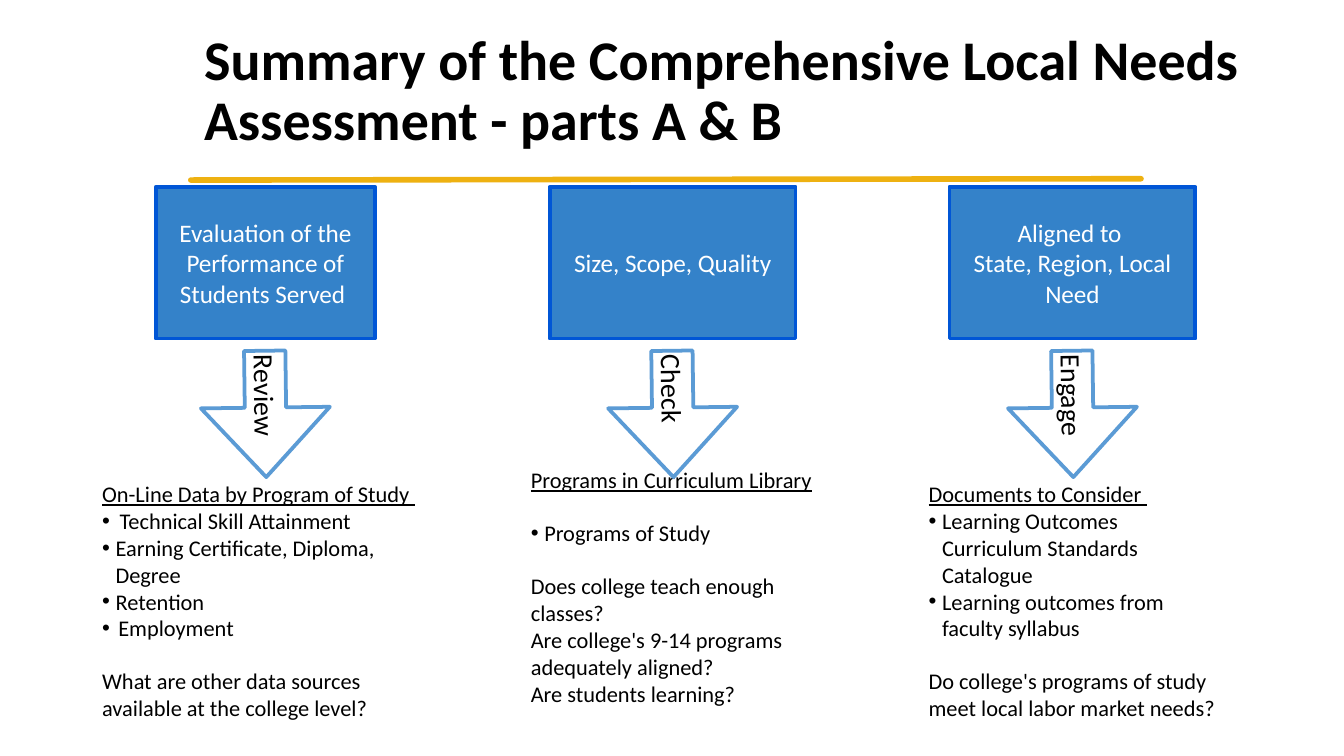
from lxml.etree import SubElement
from pptx import Presentation
from pptx.dml.color import RGBColor
from pptx.enum.shapes import MSO_CONNECTOR as Link, MSO_SHAPE as Shape
from pptx.enum.text import MSO_ANCHOR as Anchor, PP_ALIGN as Align
from pptx.oxml.ns import qn
from pptx.util import Pt

PX = 9144
COLORS = {"ink": "000000", "white": "FFFFFF", "gold": "EEB111",
          "card": "3482C9", "card_edge": "0056D6", "arrow_edge": "5B9BD5"}
INSET = 3
NOTE_GAP = 14

COLUMNS = [
    {"box": (73, 139, 249, 402), "card_width": 163, "verb": "Review",
     "card": ["Evaluation of the Performance of Students Served "],
     "heading": "On-Line Data by Program of Study ", "heading_gap": 0,
     "bullets": [("Technical Skill Attainment", 13),
                 ("Earning Certificate, Diploma, Degree", 10),
                 ("Retention", 10), ("Employment", 12)],
     "questions": ["What are other data sources available at the college level?"]},
    {"box": (392, 139, 217, 381), "card_width": 183, "verb": "Check",
     "card": ["Size, Scope, Quality"],
     "heading": "Programs in Curriculum Library", "heading_gap": NOTE_GAP,
     "bullets": [("Programs of Study", 10)],
     "questions": ["Does college teach enough classes?",
                   "Are college's 9-14 programs adequately aligned?",
                   "Are students learning?"]},
    {"box": (688, 139, 220, 402), "card_width": 183, "verb": "Engage",
     "card": ["Aligned to ", "State, Region, Local", "Need"],
     "heading": "Documents to Consider ", "heading_gap": 0,
     "bullets": [("Learning Outcomes Curriculum Standards Catalogue", 10),
                 ("Learning outcomes from faculty syllabus", 10)],
     "questions": ["Do college's programs of study meet local labor market needs?"]},
]


def emu(*lengths):
    """Turn px lengths into whole EMU."""
    return [round(length * PX) for length in lengths]


def color(name):
    """Look up a named colour."""
    return RGBColor.from_string(COLORS[name])


def set_frame(frame, inset_x=INSET, inset_y=INSET):
    """Wrap and vertically centre a text frame with the given insets."""
    frame.word_wrap = True
    frame.vertical_anchor = Anchor.MIDDLE
    frame.margin_left = frame.margin_right = inset_x * PX
    frame.margin_top = frame.margin_bottom = inset_y * PX


def add_para(frame, text, size, ink="ink", align=Align.LEFT, bold=False, underline=False):
    """Write one paragraph, reusing the empty first one."""
    first = frame.paragraphs[0]
    para = frame.add_paragraph() if first.runs else first
    para.alignment = align
    span = para.add_run()
    span.text = text
    span.font.name = "Calibri"
    span.font.size = Pt(size)
    span.font.bold = bold
    span.font.underline = underline
    span.font.color.rgb = color(ink)
    return para


def add_bullet(para, indent):
    """Give a paragraph a hanging round bullet."""
    props = para._p.get_or_add_pPr()
    props.set("marL", str(indent * PX))
    props.set("indent", str(-indent * PX))
    SubElement(props, qn("a:buFont")).set("typeface", "Arial")
    SubElement(props, qn("a:buChar")).set("char", "•")


def add_block(page, kind, box, fill, edge):
    """Draw a filled, outlined preset shape."""
    block = page.shapes.add_shape(kind, *emu(*box))
    block.shadow.inherit = False
    block.fill.solid()
    block.fill.fore_color.rgb = color(fill)
    block.line.color.rgb = color(edge)
    block.line.width = Pt(2)
    set_frame(block.text_frame)
    return block


def add_header(page, box):
    """Place the title and the gold rule below it."""
    left, top, width, height = box
    rule = page.shapes.add_connector(
        Link.STRAIGHT, *emu(left, top + 120, left + 707, top + 119))
    rule.line.color.rgb = color("gold")
    rule.line.width = Pt(3)
    rule.line._get_or_add_ln().set("cap", "rnd")
    SubElement(rule._element.spPr, qn("a:effectLst"))
    title = page.shapes.add_textbox(*emu(left, top, width, height)).text_frame
    set_frame(title, 10, 5)
    para = add_para(title, "Summary of the Comprehensive Local Needs Assessment - parts A & B",
                    30, bold=True)
    para.line_spacing = 0.9


def add_column(page, box, column):
    """Stack a card, its notes and a down arrow on the column's centre line."""
    left, top, width, height = box
    center = left + width / 2
    card_width = column["card_width"]
    card = add_block(page, Shape.RECTANGLE, (center - card_width / 2, top, card_width, 113),
                     "card", "card_edge")
    for text in column["card"]:
        add_para(card.text_frame, text, 13.5, "white", Align.CENTER)

    notes = page.shapes.add_textbox(*emu(left, top + 214, width, height - 214)).text_frame
    set_frame(notes)
    heading = add_para(notes, column["heading"], 12, underline=True)
    heading.space_after = Pt(column["heading_gap"])
    for text, indent in column["bullets"]:
        add_bullet(add_para(notes, text, 12), indent)
    for index, text in enumerate(column["questions"]):
        para = add_para(notes, text, 12)
        para.space_before = Pt(0 if index else NOTE_GAP)

    arrow = add_block(page, Shape.RIGHT_ARROW, (center - 47, top + 121, 94, 96),
                      "white", "arrow_edge")
    arrow.rotation = 89.3
    arrow.adjustments[0] = 0.32
    arrow.adjustments[1] = 0.55
    add_para(arrow.text_frame, column["verb"], 15)


def main():
    """Build the one-page deck in 16:9."""
    deck = Presentation()
    deck.slide_width = 1000 * PX
    deck.slide_height = deck.slide_width * 9 // 16
    page = deck.slides.add_slide(deck.slide_layouts[6])
    add_header(page, (142, 14, 805, 109))
    for column in COLUMNS:
        add_column(page, column["box"], column)
    deck.save("out.pptx")


if __name__ == "__main__":
    main()
